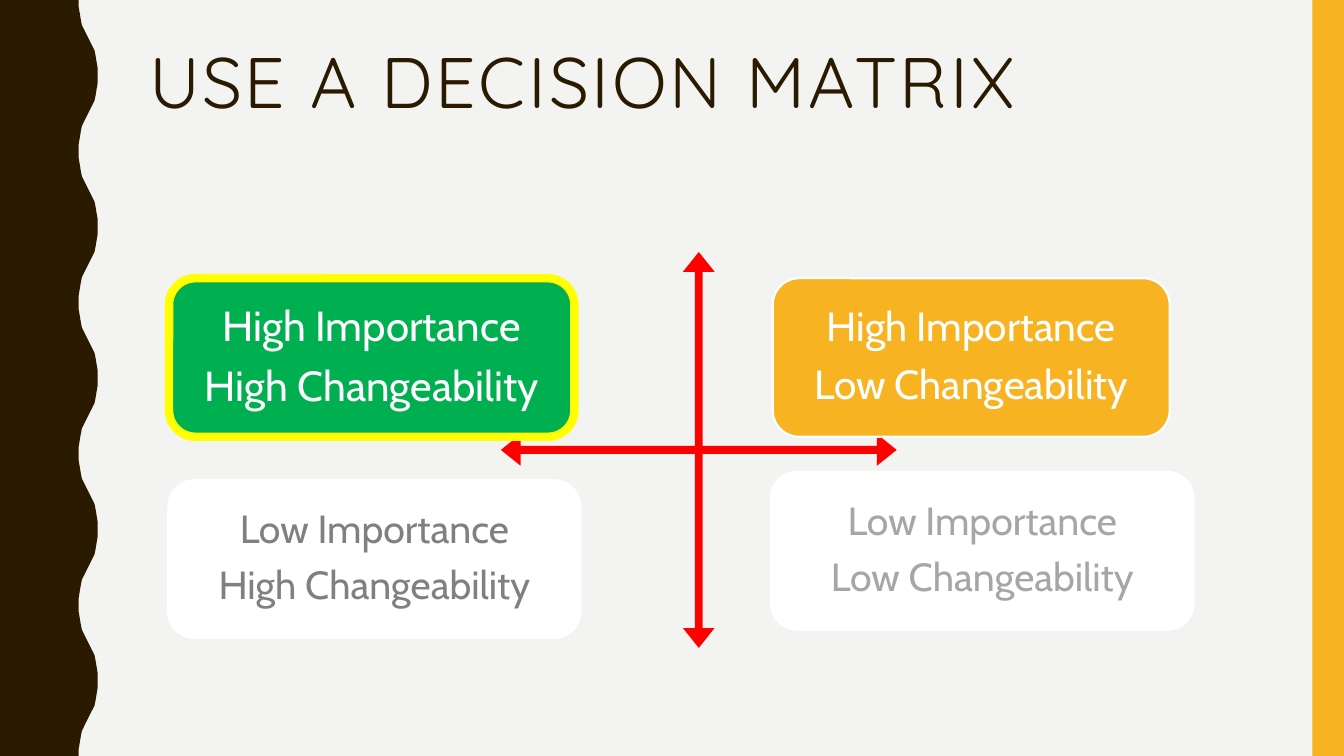
from pptx import Presentation
from pptx import util as u
from pptx.dml.color import RGBColor
from pptx.enum import shapes, text

PX = 9525  # EMU per px, 96 px to the inch
W, H = 1280, 720
COLORS = {
    "paper": "F3F3F2", "brown": "2A1A00", "amber": "F8B323", "red": "FF0000",
    "green": "00B050", "yellow": "FFFF00", "white": "FFFFFF",
    "gray": "808080", "silver": "A6A6A6",
}
# box, fill, outline, outline pt, lines, text size, text colour
QUADRANTS = [
    ((161, 265, 386, 151), "green", "yellow", 6,
     ["High Importance", "High Changeability"], 30, "white"),
    ((736, 265, 378, 151), "amber", "white", 1.5,
     ["High Importance", "Low Changeability"], 29, "white"),
    ((160, 457, 393, 151), "white", "white", 1,
     ["Low Importance", "High Changeability"], 28, "gray"),
    ((734, 449, 403, 151), "white", "white", 1,
     ["Low Importance", "Low Changeability"], 28, "silver"),
]


def rgb(name):
    return RGBColor.from_string(COLORS[name])


def emu(box):
    return [v * PX for v in box]


def style(sp, fill, line=None, width=1):
    sp.shadow.inherit = False
    sp.fill.solid()
    sp.fill.fore_color.rgb = rgb(fill)
    if line:
        sp.line.color.rgb = rgb(line)
        sp.line.width = u.Pt(width)
    else:
        sp.line.fill.background()


def add_preset(s, kind, box, fill, **outline):
    sp = s.shapes.add_shape(kind, *emu(box))
    style(sp, fill, **outline)
    return sp


def write(tf, lines, *, size, color, font, align, anchor, margins,
          after=0, tracking=0):
    """Fill a text frame; after is a share of the text size, tracking is in pt."""
    tf.word_wrap = True
    tf.auto_size = text.MSO_AUTO_SIZE.NONE
    tf.vertical_anchor = anchor
    tf.margin_left = tf.margin_right = margins[0] * PX
    tf.margin_top = tf.margin_bottom = margins[1] * PX
    for i, line in enumerate(lines):
        p = tf.add_paragraph() if i else tf.paragraphs[0]
        p.alignment = align
        p.line_spacing = 0.9
        p.space_before = u.Pt(0)
        p.space_after = u.Pt(after * size)
        r = p.add_run()
        r.text = line
        r.font.size = u.Pt(size)
        r.font.name = font
        r.font.color.rgb = rgb(color)
        if tracking:
            r.font._element.set("spc", str(tracking * 100))


def add_wavy_band(s, box, period):
    """Band whose right edge swings in and out once per period."""
    x, y, w, h = box
    quarter = [(18, 0), (18, 7), (17, 13), (16, 19), (15, 24), (13, 28),
               (11, 32), (9, 36)]  # inset from the crest, drop
    half = period // 2
    outward = quarter + [(18 - dx, half - dy) for dx, dy in quarter[-2::-1]]
    wave = outward + [(dx, period - dy) for dx, dy in outward[-2::-1]]
    edge = [(x + w - dx, y + top + dy)
            for top in range(0, h, period) for dx, dy in wave]
    fb = s.shapes.build_freeform(x, y, scale=PX)
    fb.add_line_segments(edge + [(x, y + h)], close=True)
    style(fb.convert_to_shape(), "brown")


def add_title(s, box, title):
    sp = s.shapes.title
    sp.left, sp.top, sp.width, sp.height = emu(box)
    write(sp.text_frame, [title], size=51, color="brown", font="Quicksand",
          align=text.PP_ALIGN.LEFT, anchor=text.MSO_ANCHOR.TOP,
          margins=(10, 5), tracking=2)


def add_axes(s, box):
    sp = add_preset(s, shapes.MSO_SHAPE.QUAD_ARROW, box, "red")
    for i, share in enumerate((0.02, 0.04, 0.05)):
        sp.adjustments[i] = share


def add_quadrant(s, box, fill, line, width, lines, size, color):
    sp = add_preset(s, shapes.MSO_SHAPE.ROUNDED_RECTANGLE, box, fill,
                    line=line, width=width)
    write(sp.text_frame, lines, size=size, color=color, font="Cabin",
          align=text.PP_ALIGN.CENTER, anchor=text.MSO_ANCHOR.MIDDLE,
          margins=(12, 12), after=0.35)


def decision_matrix_slide(prs):
    s = prs.slides.add_slide(prs.slide_layouts[5])
    s.background.fill.solid()
    s.background.fill.fore_color.rgb = rgb("paper")
    add_wavy_band(s, (0, 0, 93, H), period=144)
    add_preset(s, shapes.MSO_SHAPE.RECTANGLE, (W - 30, 0, 30, H), "amber")
    add_title(s, (132, 40, 1068, 156), "USE A DECISION MATRIX")
    add_axes(s, (477, 240, 377, 377))
    for quadrant in QUADRANTS:
        add_quadrant(s, *quadrant)


def main():
    prs = Presentation()
    prs.slide_width, prs.slide_height = emu((W, H))
    decision_matrix_slide(prs)
    prs.save("out.pptx")


if __name__ == "__main__":
    main()
